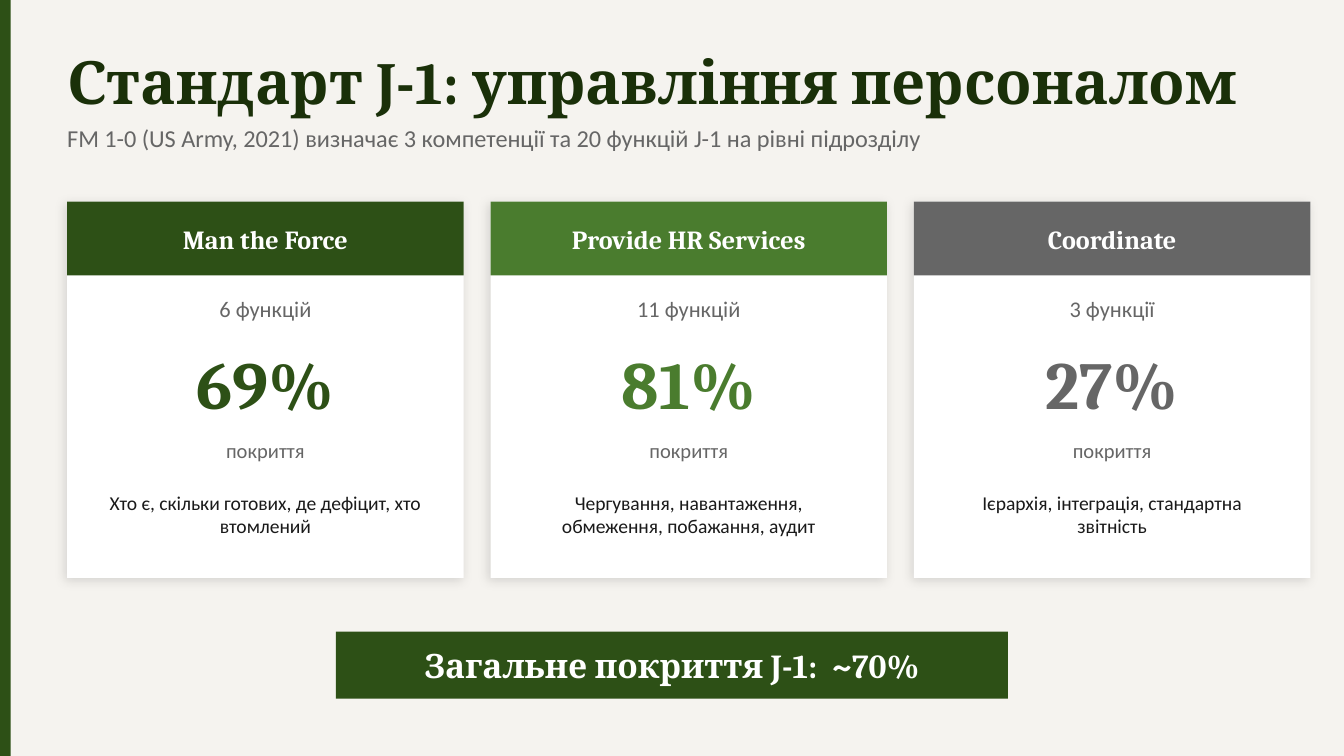
"""Build the J-1 personnel management standard slide with three coverage cards."""
from pptx import Presentation
from pptx.dml.color import RGBColor
from pptx.enum.shapes import MSO_SHAPE
from pptx.enum.text import MSO_ANCHOR, PP_ALIGN
from pptx.oxml import parse_xml
from pptx.util import Inches, Pt

rgb = RGBColor.from_string
DARK, GREEN, GRAY, WHITE = "2D5016", "4A7C2E", "666666", "FFFFFF"
SHADOW = """<a:effectLst xmlns:a="http://schemas.openxmlformats.org/drawingml/2006/main">
<a:outerShdw blurRad="76200" dist="25400" dir="8100000" algn="bl" rotWithShape="0">
<a:srgbClr val="000000"><a:alpha val="12000"/></a:srgbClr></a:outerShdw></a:effectLst>"""

prs = Presentation()
prs.slide_width = Inches(10)
prs.slide_height = Inches(10 * 9 / 16)
slide = prs.slides.add_slide(prs.slide_layouts[6])
slide.background.fill.solid()
slide.background.fill.fore_color.rgb = rgb("F5F3EF")


def add_bar(x, y, w, h, color):
    s = slide.shapes.add_shape(MSO_SHAPE.RECTANGLE, Inches(x), Inches(y), Inches(w), Inches(h))
    s.shadow.inherit = False
    s.fill.solid()
    s.fill.fore_color.rgb = rgb(color)
    s.line.fill.background()
    return s


def add_text(x, y, w, h, text, size, font, color, bold=False, centered=True):
    s = slide.shapes.add_textbox(Inches(x), Inches(y), Inches(w), Inches(h))
    tf = s.text_frame
    tf.word_wrap = True
    tf.vertical_anchor = MSO_ANCHOR.MIDDLE
    if not centered:
        tf.margin_left = tf.margin_right = tf.margin_top = tf.margin_bottom = 0
    tf.text = text
    p = tf.paragraphs[0]
    p.alignment = PP_ALIGN.CENTER if centered else PP_ALIGN.LEFT
    r = p.runs[0]
    r.font.name, r.font.size, r.font.bold = font, Pt(size), bold
    r.font.color.rgb = rgb(color)


add_bar(0, 0, 0.08, prs.slide_height.inches, DARK)
add_text(0.5, 0.3, 9, 0.6, "Стандарт J-1: управління персоналом", 32, "Cambria", "1A3009",
         bold=True, centered=False)
add_text(0.5, 0.85, 9, 0.35,
         "FM 1-0 (US Army, 2021) визначає 3 компетенції та 20 функцій J-1 на рівні підрозділу",
         13, "Calibri", GRAY, centered=False)

cards = [
    ("Man the Force", "6 функцій", "69%", "Хто є, скільки готових, де дефіцит, хто втомлений", DARK),
    ("Provide HR Services", "11 функцій", "81%",
     "Чергування, навантаження, обмеження, побажання, аудит", GREEN),
    ("Coordinate", "3 функції", "27%", "Ієрархія, інтеграція, стандартна звітність", GRAY),
]
card_w, gap, inset = 2.95, 0.2, 0.15
for i, (title, functions, coverage, details, color) in enumerate(cards):
    x = 0.5 + i * (card_w + gap)
    card = add_bar(x, 1.5, card_w, 2.8, WHITE)
    spPr = card.element.spPr
    spPr.replace(spPr.find("{*}effectLst"), parse_xml(SHADOW))
    add_bar(x, 1.5, card_w, 0.55, color)
    add_text(x, 1.5, card_w, 0.55, title, 14, "Cambria", WHITE, bold=True)
    add_text(x, 2.15, card_w, 0.3, functions, 12, "Calibri", GRAY)
    add_text(x, 2.5, card_w, 0.7, coverage, 36, "Cambria", color, bold=True)
    add_text(x, 3.2, card_w, 0.3, "покриття", 11, "Calibri", GRAY)
    add_text(x + inset, 3.5, card_w - 2 * inset, 0.65, details, 10.5, "Calibri", "1A1A1A")

add_bar(2.5, 4.7, 5, 0.5, DARK)
add_text(2.5, 4.7, 5, 0.5, "Загальне покриття J-1:  ~70%", 18, "Cambria", WHITE, bold=True)

prs.save("out.pptx")
